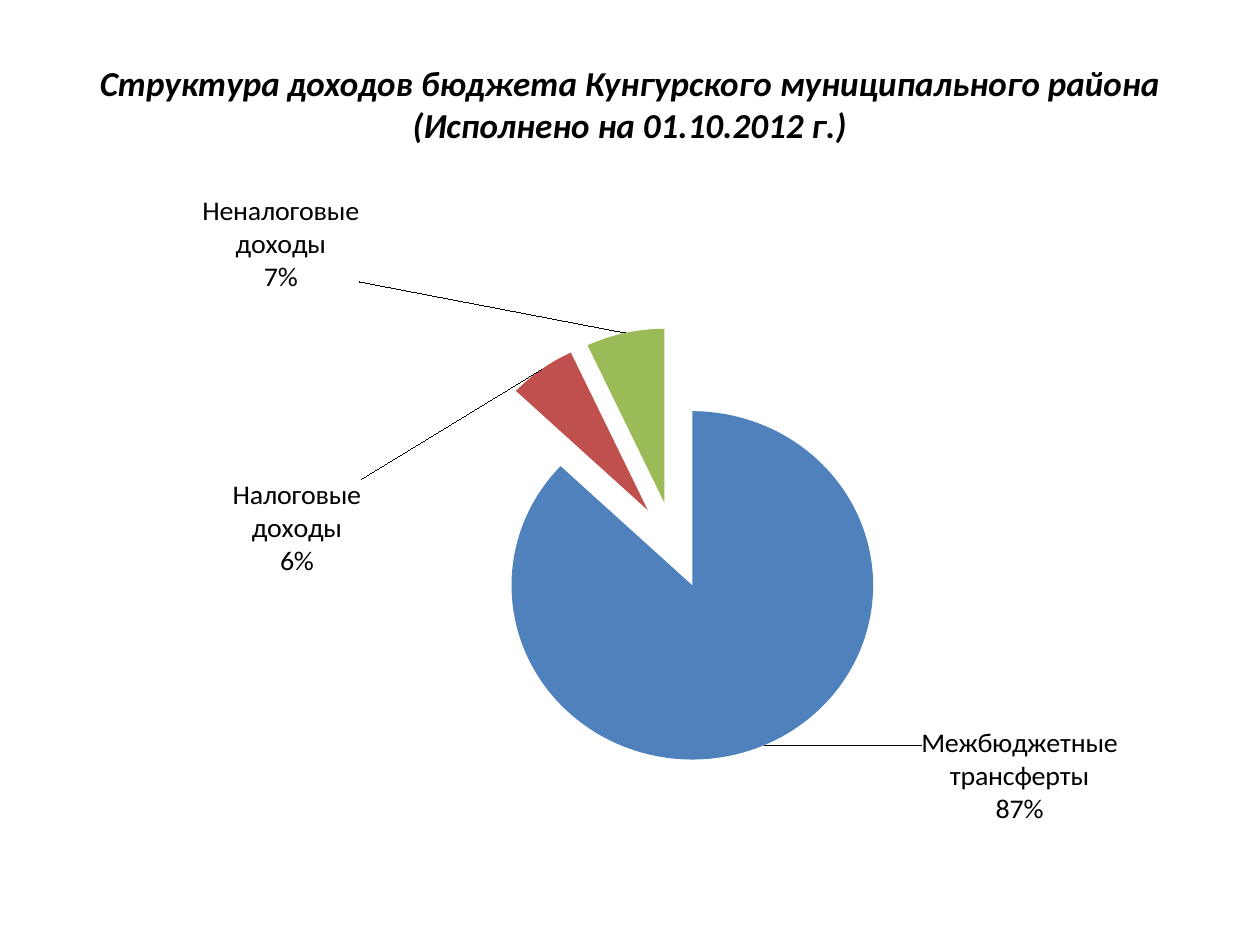
from lxml import etree
from pptx import Presentation, util as u
from pptx.chart.data import CategoryChartData
from pptx.dml.color import RGBColor
from pptx.enum import chart as ch, text
from pptx.oxml import parse_xml
from pptx.oxml.ns import nsdecls, qn

THEME = {
    "font": "Calibri", "ink": "000000",
    "title_size": 20, "label_size": 16, "base_size": 10,
    "slices": ["4F81BD", "C0504D", "9BBB59"],
}
INK = RGBColor.from_string(THEME["ink"])

heading_lines = ["Структура доходов бюджета Кунгурского муниципального района",
                 "(Исполнено на 01.10.2012 г.)"]
# income source, percent, label shift as shares of the chart's size
incomes = [("Межбюджетные трансферты", 87, (0.14, -0.03)),
           ("Налоговые доходы", 6, (-0.16, 0.34)),
           ("Неналоговые доходы", 7, (-0.24, -0.07))]


def manual_layout(settings):
    """Chart layout element from (tag, value) pairs."""
    inner = "".join(f'<c:{tag} val="{value}"/>' for tag, value in settings)
    return parse_xml(f'<c:layout {nsdecls("c")}><c:manualLayout>{inner}'
                     '</c:manualLayout></c:layout>')


deck = Presentation()
deck.slide_width, deck.slide_height = u.Inches(10), u.Inches(7.5)
W, H = deck.slide_width, deck.slide_height
slide = deck.slides.add_slide(deck.slide_layouts[6])

# Heading
heading = slide.shapes.add_textbox(int(W * 0.05), int(H * 0.04),
                                   int(W * 0.9), int(H / 6)).text_frame
heading.word_wrap = True
heading.vertical_anchor = text.MSO_ANCHOR.MIDDLE
heading.margin_bottom = u.Inches(0.26)
line = heading.paragraphs[0]
line.alignment = text.PP_ALIGN.CENTER
for number, words in enumerate(heading_lines):
    if number:
        line.add_line_break()
    run = line.add_run()
    run.text = words
    run.font.name = THEME["font"]
    run.font.size = u.Pt(THEME["title_size"])
    run.font.bold = run.font.italic = True
    run.font.color.rgb = INK

# Income pie
data = CategoryChartData()
data.categories = [name for name, _, _ in incomes]
data.add_series("Series 1", [percent for _, percent, _ in incomes])
income_pie = slide.shapes.add_chart(
    ch.XL_CHART_TYPE.PIE, u.Inches(0.83), u.Inches(1.55),
    u.Inches(8.74), u.Inches(5.2), data).chart
income_pie.has_legend = False
income_pie.has_title = False
income_pie.font.name = THEME["font"]
income_pie.font.size = u.Pt(THEME["base_size"])
income_pie.font.color.rgb = INK
plot = income_pie.plots[0]
plot.vary_by_categories = True
shares = plot.series[0]

# Slice colours
for index, colour in enumerate(THEME["slices"]):
    fill = shares.points[index].format.fill
    fill.solid()
    fill.fore_color.rgb = RGBColor.from_string(colour)

# Labels with name and percentage
labels = shares.data_labels
labels.show_category_name = True
labels.show_percentage = True
labels.show_value = False
labels.show_legend_key = False
labels.position = ch.XL_LABEL_POSITION.OUTSIDE_END
labels.font.name = THEME["font"]
labels.font.size = u.Pt(THEME["label_size"])
labels.font.color.rgb = INK

# Label places, line break between name and percentage, slice gaps
series_xml = shares._element
labels_xml = series_xml.find(qn("c:dLbls"))
for old in labels_xml.findall(qn("c:separator")):
    labels_xml.remove(old)
separator = parse_xml(f'<c:separator {nsdecls("c")}>\n</c:separator>')
labels_xml.find(qn("c:showBubbleSize")).addnext(separator)
shared = [etree.tostring(part, encoding="unicode") for part in labels_xml
          if part.tag not in (qn("c:showLeaderLines"), qn("c:leaderLines"))]
for index, (_, _, (dx, dy)) in enumerate(incomes):
    label = parse_xml(f'<c:dLbl {nsdecls("c", "a")}><c:idx val="{index}"/>'
                      f'{"".join(shared)}</c:dLbl>')
    label.insert(1, manual_layout([("x", dx), ("y", dy)]))
    labels_xml.insert(index, label)
leader = labels_xml.find(qn("c:showLeaderLines"))
if leader is None:
    leader = parse_xml(f'<c:showLeaderLines {nsdecls("c")}/>')
    separator.addnext(leader)
leader.set("val", "1")
series_xml.find(qn("c:tx")).addnext(
    parse_xml(f'<c:explosion {nsdecls("c")} val="25"/>'))

# Plot area
plot_xml = income_pie._chartSpace.find(f'.//{qn("c:plotArea")}')
for old in plot_xml.findall(qn("c:layout")):
    plot_xml.remove(old)
plot_xml.insert(0, manual_layout([
    ("layoutTarget", "inner"), ("xMode", "edge"), ("yMode", "edge"),
    ("x", 0.085), ("y", 0.21), ("w", 0.865), ("h", 0.69)]))

deck.save("out.pptx")
